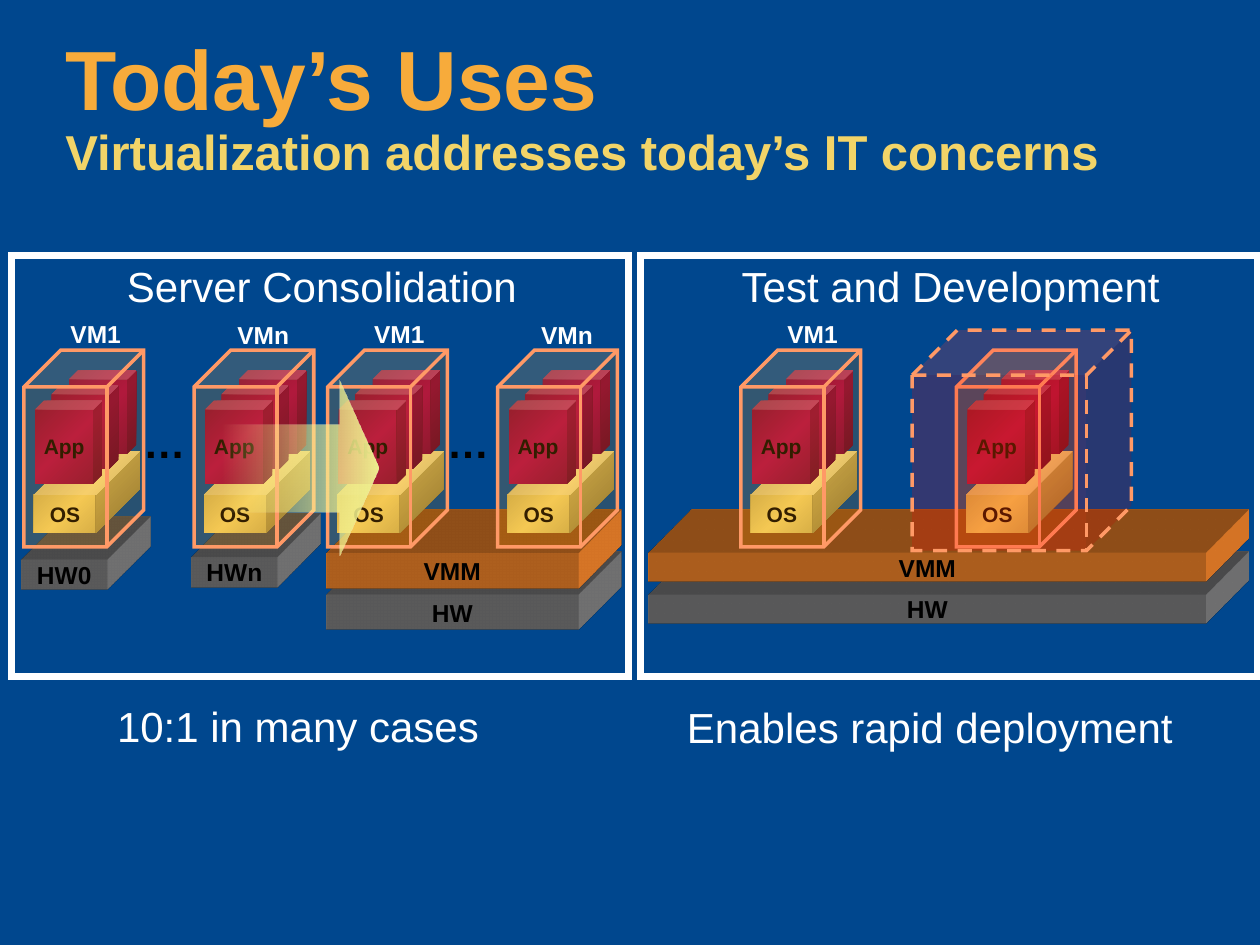
import pptx
import pptx.dml.color
import pptx.enum.dml
import pptx.enum.shapes
import pptx.enum.text
import pptx.oxml
import pptx.util
from pptx.util import Inches

RGBColor = pptx.dml.color.RGBColor
MSO_SHAPE = pptx.enum.shapes.MSO_SHAPE
PP_ALIGN = pptx.enum.text.PP_ALIGN
MSO_ANCHOR = pptx.enum.text.MSO_ANCHOR

NAVY = RGBColor(0x00, 0x47, 0x8E)
ORANGE = RGBColor(0xF7, 0xAB, 0x3B)
YELLOW = RGBColor(0xF2, 0xD4, 0x68)
DARK_YELLOW = RGBColor(0xAD, 0x98, 0x4A)
WHITE = RGBColor(0xFF, 0xFF, 0xFF)
BLACK = RGBColor(0x00, 0x00, 0x00)
GRAY = RGBColor(0x80, 0x80, 0x80)
VMM_ORANGE = RGBColor(0xF5, 0x86, 0x2B)
RED = RGBColor(0xAA, 0x01, 0x4C)
DARK_RED = RGBColor(0x7A, 0x01, 0x36)
AMBER = RGBColor(0xFF, 0x99, 0x00)
CAGE_LINE = RGBColor(0xFF, 0x99, 0x66)
BRIGHT_RED = RGBColor(0xFF, 0x00, 0x00)
PALE_YELLOW = RGBColor(0xFF, 0xFF, 0x99)
ARROW_TIP = RGBColor(0xEF, 0xEF, 0x8F)

GOLD_STOPS = [(0, DARK_YELLOW, 100), (50, YELLOW, 100), (100, DARK_YELLOW, 100)]
RED_STOPS = [(0, DARK_RED, 100), (50, RED, 100), (100, DARK_RED, 100)]
ARROW_STOPS = [(0, PALE_YELLOW, 0), (100, ARROW_TIP, 100)]
NS = 'xmlns:a="http://schemas.openxmlformats.org/drawingml/2006/main"'

prs = pptx.Presentation()
prs.slide_width, prs.slide_height = Inches(10), Inches(7.5)
s = prs.slides.add_slide(prs.slide_layouts[6])
s.background.fill.solid()
s.background.fill.fore_color.rgb = NAVY


def add_text(text, at=None, sp=None, size=24, color=WHITE, bold=False,
             align=PP_ALIGN.CENTER, anchor=MSO_ANCHOR.TOP, wrap=False):
    """Write text into sp, or into a new text box at the given place."""
    if sp is None:
        sp = s.shapes.add_textbox(*[Inches(v) for v in at])
    tf = sp.text_frame
    tf.word_wrap = wrap
    tf.vertical_anchor = anchor
    p = tf.paragraphs[0]
    p.alignment = align
    r = p.add_run()
    r.text = text
    r.font.name, r.font.size = "Arial", pptx.util.Pt(size)
    r.font.bold, r.font.color.rgb = bold, color
    return sp


def add_part(kind, at, fill=None, alpha=100, stops=None, angle=45, adj=(),
             line=None, width=2, dash=False):
    """Add a preset shape with a solid, see-through, gradient or empty fill."""
    sp = s.shapes.add_shape(kind, *[Inches(v) for v in at])
    sp.shadow.inherit = False
    for i, value in enumerate(adj):
        sp.adjustments[i] = value
    if stops:
        gs = "".join(f'<a:gs pos="{pos * 1000}"><a:srgbClr val="{c}"><a:alpha val="{a * 1000}"/>'
                     f'</a:srgbClr></a:gs>' for pos, c, a in stops)
        sp.fill.background()
        old = sp._element.spPr.find(pptx.oxml.ns.qn("a:noFill"))
        old.getparent().replace(old, pptx.oxml.parse_xml(
            f'<a:gradFill {NS} rotWithShape="1"><a:gsLst>{gs}</a:gsLst>'
            f'<a:lin ang="{angle * 60000}" scaled="1"/></a:gradFill>'))
    elif fill is None:
        sp.fill.background()
    else:
        sp.fill.solid()
        sp.fill.fore_color.rgb = fill
        if alpha < 100:
            clr = sp._element.spPr.find(".//" + pptx.oxml.ns.qn("a:srgbClr"))
            clr.append(pptx.oxml.parse_xml(f'<a:alpha {NS} val="{alpha * 1000}"/>'))
    if line is None:
        sp.line.fill.background()
    else:
        sp.line.color.rgb, sp.line.width = line, pptx.util.Pt(width)
        if dash:
            sp.line.dash_style = pptx.enum.dml.MSO_LINE.DASH
        ln = sp._element.spPr.find(pptx.oxml.ns.qn("a:ln"))
        ln.append(pptx.oxml.parse_xml(f'<a:miter {NS} lim="800000"/>'))
    return sp


# Title and subtitle
title = add_text("Today’s Uses", at=(0.42, 0.25, 9.52, 1.24), size=48, color=ORANGE, bold=True,
                 align=PP_ALIGN.LEFT, anchor=MSO_ANCHOR.BOTTOM, wrap=True)
p = title.text_frame.paragraphs[0]
p.line_spacing = 0.9
p.add_line_break()
add_text("Virtualization addresses today’s IT concerns", sp=title, size=28, color=YELLOW,
         bold=True, align=PP_ALIGN.LEFT, anchor=MSO_ANCHOR.BOTTOM, wrap=True)

# Panels with headings, and captions below
for x, heading in [(0.09, "Server Consolidation"), (5.08, "Test and Development")]:
    add_text(heading, at=(x + 0.05, 2.02, 4.83, 0.5), wrap=True)
    add_part(MSO_SHAPE.RECTANGLE, (x, 2.03, 4.9, 3.34), line=WHITE, width=4)
add_text("10:1 in many cases", at=(0.83, 5.51, 3.07, 0.5))
add_text("Enables rapid deployment", at=(5.35, 5.52, 4.06, 0.5))

# Hardware and VMM slabs, extruded to the upper right
for label, color, at in [
    ("HWn", GRAY, (1.52, 4.42, 0.68, 0.24)),
    ("HW0", GRAY, (0.17, 4.44, 0.68, 0.24)),
    ("HW", GRAY, (2.59, 4.72, 2, 0.28)),
    ("VMM", VMM_ORANGE, (2.59, 4.39, 2, 0.28)),
    ("HW", GRAY, (5.15, 4.72, 4.42, 0.23)),
    ("VMM", VMM_ORANGE, (5.15, 4.39, 4.42, 0.23)),
]:
    sp = add_part(MSO_SHAPE.RECTANGLE, at, fill=color)
    for xml in (
        f'<a:scene3d {NS}><a:camera prst="legacyObliqueTopRight"/>'
        '<a:lightRig rig="legacyFlat3" dir="b"/></a:scene3d>',
        f'<a:sp3d {NS} extrusionH="{Inches(0.97)}" prstMaterial="legacyMatte">'
        '<a:bevelT w="13500" h="13500" prst="angle"/><a:bevelB w="13500" h="13500" prst="angle"/>'
        f'<a:extrusionClr><a:srgbClr val="{color}"/></a:extrusionClr></a:sp3d>',
    ):
        sp._element.spPr.append(pptx.oxml.parse_xml(xml))
    add_text(label, sp=sp, size=14, color=BLACK, bold=True, anchor=MSO_ANCHOR.MIDDLE)

# Virtual machines: OS block, three stacked apps, glass cage
for x in (0.19, 1.54, 2.6, 3.95, 7.59, 5.88):
    sp = add_part(MSO_SHAPE.CUBE, (x + 0.08, 3.58, 0.84, 0.65), stops=GOLD_STOPS, adj=[0.535])
    add_text("OS", sp=sp, size=12, color=BLACK, bold=True, anchor=MSO_ANCHOR.MIDDLE)
    for dx, y in [(0.36, 2.94), (0.22, 3.06), (0.09, 3.18)]:
        sp = add_part(MSO_SHAPE.CUBE, (x + dx, y, 0.53, 0.66), stops=RED_STOPS, adj=[0.131])
    add_text("App", sp=sp, size=12, color=BLACK, bold=True, anchor=MSO_ANCHOR.MIDDLE)
    add_part(MSO_SHAPE.CUBE, (x, 2.78, 0.95, 1.56), fill=AMBER, alpha=20, adj=[0.307],
             line=CAGE_LINE)

# Machine names and the dots between machines
for label, x, y in [("VM1", 0.43, 2.48), ("VMn", 1.76, 2.49), ("VM1", 2.84, 2.48),
                    ("VMn", 4.17, 2.49), ("VM1", 6.12, 2.48)]:
    add_text(label, at=(x, y, 0.66, 0.33), size=14, bold=True)
for x in (1.04, 3.45):
    add_text("…", at=(x, 3.26, 0.53, 0.5), color=BLACK, bold=True)

# Consolidation arrow and the dashed deployment cage
add_part(MSO_SHAPE.RIGHT_ARROW, (1.76, 3.02, 1.24, 1.39), stops=ARROW_STOPS, angle=0,
         adj=[0.5, 0.25])
add_part(MSO_SHAPE.CUBE, (7.24, 2.62, 1.74, 1.75), fill=BRIGHT_RED, alpha=20, adj=[0.205],
         line=CAGE_LINE, dash=True)

prs.save("out.pptx")
